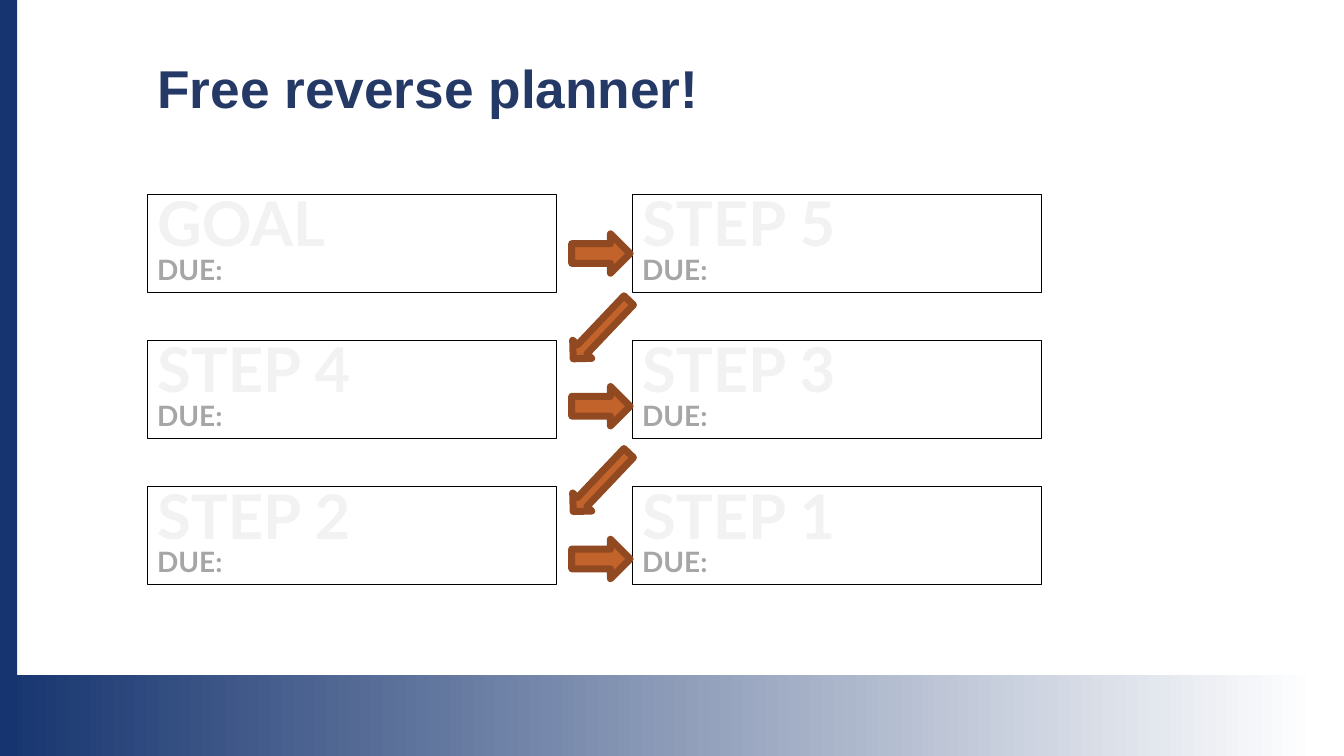
from dataclasses import dataclass

from pptx import Presentation
from pptx.dml.color import RGBColor
from pptx.enum.shapes import MSO_SHAPE
from pptx.enum.text import MSO_ANCHOR, PP_ALIGN
from pptx.util import Inches, Pt


@dataclass(frozen=True)
class Theme:
    navy: str = "16346F"
    title: str = "253967"
    white: str = "FFFFFF"
    border: str = "000000"
    step: str = "F2F2F2"
    due: str = "A6A6A6"
    arrow: str = "C2632C"
    arrow_edge: str = "904921"
    title_font: str = "Arial"
    card_font: str = "Lato"
    title_size: int = 38
    step_size: int = 44
    due_size: int = 20


T = Theme()
W, H = 13.33, 7.5
CARD_W, CARD_H = 4.06, 0.97
COL_STEP, ROW_STEP, ARROW_STEP = 4.81, 1.45, 1.515
ROWS = [("GOAL", "STEP 5"), ("STEP 4", "STEP 3"), ("STEP 2", "STEP 1")]


def rgb(color):
    return RGBColor.from_string(color)


def add_box(s, kind, x, y, w, h, fill=None, line=None, line_width=0.75):
    sp = s.shapes.add_shape(kind, Inches(x), Inches(y), Inches(w), Inches(h))
    sp.shadow.inherit = False
    if fill:
        sp.fill.solid()
        sp.fill.fore_color.rgb = rgb(fill)
    else:
        sp.fill.background()
    if line:
        sp.line.color.rgb = rgb(line)
        sp.line.width = Pt(line_width)
    else:
        sp.line.fill.background()
    return sp


def style_paragraph(p, font, size, color, spacing):
    p.alignment = PP_ALIGN.LEFT
    p.line_spacing = spacing
    p.space_before = Pt(0)
    for r in p.runs:
        r.font.name = font
        r.font.size = Pt(size)
        r.font.bold = True
        r.font.color.rgb = rgb(color)


def add_frame(s):
    band = add_box(s, MSO_SHAPE.RECTANGLE, 0, 6.7, W, H - 6.7)
    band.fill.gradient()
    band.fill.gradient_angle = 0
    for stop, color, position in zip(band.fill.gradient_stops, (T.navy, T.white), (0, 0.98)):
        stop.color.rgb = rgb(color)
        stop.position = position
    add_box(s, MSO_SHAPE.RECTANGLE, 0, 0, 0.17, H, T.navy)


def add_title(s, x, y, w, h):
    sp = s.shapes.title
    sp.left, sp.top, sp.width, sp.height = (Inches(v) for v in (x, y, w, h))
    tf = sp.text_frame
    tf.text = "Free reverse planner!"
    tf.word_wrap = True
    tf.vertical_anchor = MSO_ANCHOR.TOP
    style_paragraph(tf.paragraphs[0], T.title_font, T.title_size, T.title, 0.9)


def add_card(s, x, y, label):
    sp = add_box(s, MSO_SHAPE.RECTANGLE, x, y, CARD_W, CARD_H, line=T.border)
    tf = sp.text_frame
    tf.word_wrap = True
    tf.vertical_anchor = MSO_ANCHOR.TOP
    tf.text = f"{label}\nDUE:"
    step, due = tf.paragraphs
    style_paragraph(step, T.card_font, T.step_size, T.step, 0.8)
    style_paragraph(due, T.card_font, T.due_size, T.due, 0.8)


def add_arrow(s, x, y, w, h, rotation=0):
    sp = add_box(s, MSO_SHAPE.RIGHT_ARROW, x, y, w, h, T.arrow, T.arrow_edge, 5)
    sp.rotation = rotation


def add_planner(s, x, y):
    for row, labels in enumerate(ROWS):
        for col, label in enumerate(labels):
            add_card(s, x + col * COL_STEP, y + row * ROW_STEP, label)
    for row in range(len(ROWS)):
        arrow_y = y + 0.39 + row * ARROW_STEP
        add_arrow(s, x + 4.21, arrow_y, 0.58, 0.39)
        if row < len(ROWS) - 1:
            add_arrow(s, x + 4.1, arrow_y + 0.82, 0.8, 0.26, 133.5)


def main():
    prs = Presentation()
    prs.slide_width, prs.slide_height = Inches(W), Inches(H)
    s = prs.slides.add_slide(prs.slide_layouts[5])
    add_frame(s)
    add_title(s, 1.46, 0.57, W - 1.46, 0.96)
    add_planner(s, 1.46, 1.93)
    prs.save("out.pptx")


if __name__ == "__main__":
    main()
